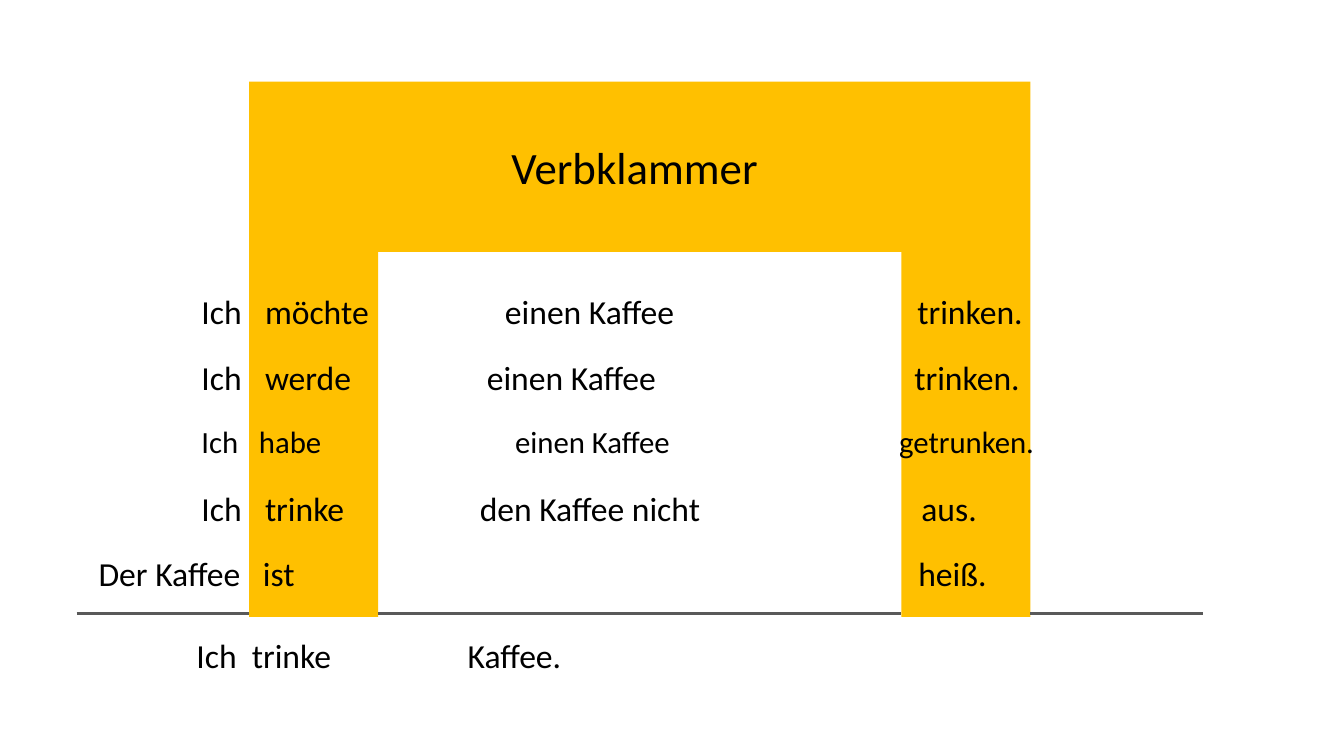
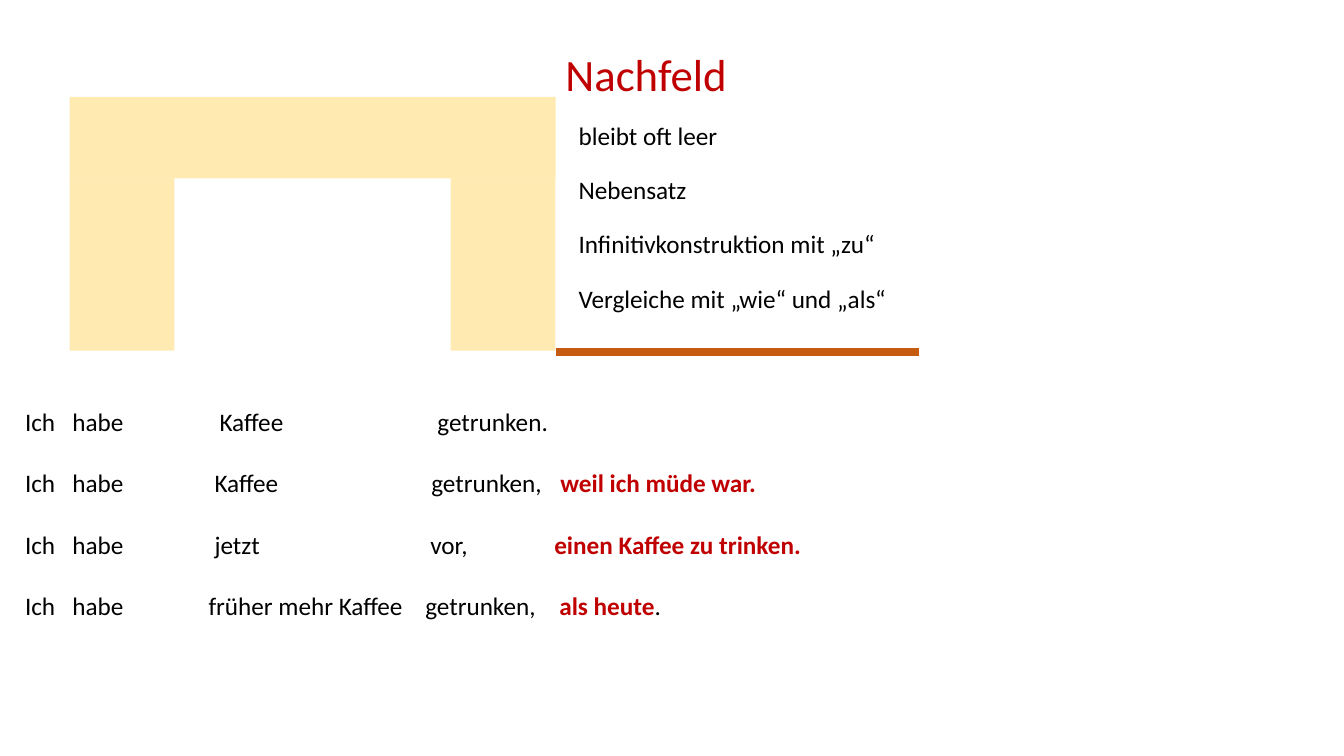
import dataclasses

import lxml.etree
import pptx
import pptx.dml.color
import pptx.enum.shapes
import pptx.enum.text
import pptx.oxml.ns
import pptx.util

PX = 9144


@dataclasses.dataclass(frozen=True)
class Theme:
    font: str = "Calibri"
    text: str = "000000"
    accent: str = "C00000"
    arch: str = "FFC000"
    ground: str = "595959"
    after_line: str = "C55A11"
    title_size: int = 32
    sentence_size: int = 24
    long_sentence_size: int = 22
    small_size: int = 18
    inset: int = 10


@dataclasses.dataclass(frozen=True)
class Box:
    left: int
    top: int
    width: int
    height: int

    @property
    def right(self):
        return self.left + self.width

    @property
    def bottom(self):
        return self.top + self.height

    def emu(self):
        return [value * PX for value in (self.left, self.top, self.width, self.height)]


THEME = Theme()


def color(value):
    return pptx.dml.color.RGBColor.from_string(value)


def add_child(parent, tag, **attributes):
    return lxml.etree.SubElement(parent, pptx.oxml.ns.qn(tag), attributes)


def format_run(run, size, font_color=THEME.text, bold=False):
    run.font.name = THEME.font
    run.font.size = pptx.util.Pt(size)
    run.font.color.rgb = color(font_color)
    run.font.bold = bold


def add_line(slide, left, right, y, line_color, width):
    line = slide.shapes.add_connector(
        pptx.enum.shapes.MSO_CONNECTOR.STRAIGHT, left * PX, y * PX, right * PX, y * PX)
    line.line.color.rgb = color(line_color)
    line.line.width = pptx.util.Pt(width)
    add_child(line._element.spPr, "a:effectLst")


def add_text(slide, box, text, size, font_color=THEME.text):
    text_box = slide.shapes.add_textbox(*box.emu())
    text_frame = text_box.text_frame
    text_frame.word_wrap = True
    text_frame.auto_size = pptx.enum.text.MSO_AUTO_SIZE.SHAPE_TO_FIT_TEXT
    text_frame.text = text
    paragraph = text_frame.paragraphs[0]
    format_run(paragraph.runs[0], size, font_color)
    return paragraph


def add_sentence(slide, top, right, height, columns, words, size):
    start = columns[0]
    left = start - THEME.inset
    paragraph = add_text(slide, Box(left, top, right - left, height), "\t".join(words), size)
    tab_list = add_child(paragraph._p.get_or_add_pPr(), "a:tabLst")
    for column in columns[1:]:
        add_child(tab_list, "a:tab", pos=str((column - start) * PX), algn="l")
    return paragraph


def add_arch(slide, box, lintel, post, opacity=100, title=None):
    group = slide.shapes.add_group_shape()
    post_height = box.height - lintel
    parts = [
        Box(box.left, box.top + lintel, post, post_height),
        Box(box.right - post, box.top + lintel, post, post_height),
        Box(box.left, box.top, box.width, lintel),
    ]
    for part in parts:
        shape = group.shapes.add_shape(pptx.enum.shapes.MSO_SHAPE.RECTANGLE, *part.emu())
        shape.shadow.inherit = False
        shape.fill.solid()
        shape.fill.fore_color.rgb = color(THEME.arch)
        shape.line.fill.background()
        if opacity < 100:
            fill = shape._element.spPr.find(".//" + pptx.oxml.ns.qn("a:srgbClr"))
            add_child(fill, "a:alpha", val=str(opacity * 1000))
    if title:
        shape.text_frame.text = title
        paragraph = shape.text_frame.paragraphs[0]
        paragraph.alignment = pptx.enum.text.PP_ALIGN.CENTER
        format_run(paragraph.runs[0], THEME.title_size)


def add_ground(slide, box, post, overhang):
    spans = [
        (box.left - overhang, box.left),
        (box.left + post, box.right - post),
        (box.right, box.right + overhang),
    ]
    for left, right in spans:
        add_line(slide, left, right, box.bottom - 3, THEME.ground, 2.25)


def add_bracket_sentences(slide, box):
    normal, long = THEME.sentence_size, THEME.long_sentence_size
    sentences = [
        ((200, 263, 501, 910), ("Ich", "möchte", "einen Kaffee", "trinken."), normal),
        ((200, 263, 483, 907), ("Ich", "werde", "einen Kaffee", "trinken."), normal),
        ((200, 257, 511, 892), ("Ich", "habe", "einen Kaffee", "getrunken."), long),
        ((200, 263, 476, 914), ("Ich", "trinke", "den Kaffee nicht", "aus."), normal),
        ((98, 261, 911), ("Der Kaffee", "ist", "heiß."), normal),
    ]
    for index, (columns, words, size) in enumerate(sentences):
        add_sentence(slide, box.top + 203 + index * 65, box.right + 33, 50, columns, words, size)
    add_sentence(slide, box.bottom + 13, box.right, 50, (195, 250, 464),
                 ("Ich", "trinke", "Kaffee."), normal)


def add_after_field(slide, box):
    add_line(slide, box.left, box.right, box.bottom, THEME.after_line, 6)
    add_text(slide, Box(box.left, box.top, 200, 64), "Nachfeld", THEME.title_size, THEME.accent)
    hints = ["bleibt oft leer", "Nebensatz", "Infinitivkonstruktion mit „zu“",
             "Vergleiche mit „wie“ und „als“"]
    for index, hint in enumerate(hints):
        add_text(slide, Box(box.left + 13, box.top + 73 + index * 54, 573, 40),
                 hint, THEME.small_size)


def add_after_field_sentences(slide, box):
    sentences = [
        ((25, 72, 218, 434), ("Ich", "habe", "Kaffee", "getrunken."), "", ""),
        ((25, 72, 213, 428, 556), ("Ich", "habe", "Kaffee", "getrunken,", ""),
         "weil ich müde war.", ""),
        ((25, 72, 213, 427, 550), ("Ich", "habe", "jetzt", "vor,", ""),
         "einen Kaffee zu trinken.", ""),
        ((25, 72, 207, 422, 555), ("Ich", "habe", "früher mehr Kaffee", "getrunken,", ""),
         "als heute", "."),
    ]
    for index, (columns, words, emphasis, ending) in enumerate(sentences):
        paragraph = add_sentence(slide, box.top + index * 61, box.right, 40,
                                 columns, words, THEME.small_size)
        for text, font_color, bold in ((emphasis, THEME.accent, True),
                                       (ending, THEME.text, False)):
            if text:
                run = paragraph.add_run()
                run.text = text
                format_run(run, THEME.small_size, font_color, bold)


def build_bracket_slide(slide):
    arch = Box(247, 81, 775, 531)
    post = 128
    add_arch(slide, arch, 169, post, title="Verbklammer ")
    add_ground(slide, arch, post, 171)
    add_bracket_sentences(slide, arch)


def build_after_field_slide(slide):
    arch = Box(69, 96, 482, 252)
    add_arch(slide, arch, 81, 104, opacity=30)
    add_after_field(slide, Box(arch.right, 41, 360, 308))
    add_after_field_sentences(slide, Box(15, 398, 850, 223))


def main():
    presentation = pptx.Presentation()
    presentation.slide_width = 1333 * PX
    presentation.slide_height = 750 * PX
    for build in (build_bracket_slide, build_after_field_slide):
        build(presentation.slides.add_slide(presentation.slide_layouts[6]))
    presentation.save("out.pptx")


if __name__ == "__main__":
    main()
